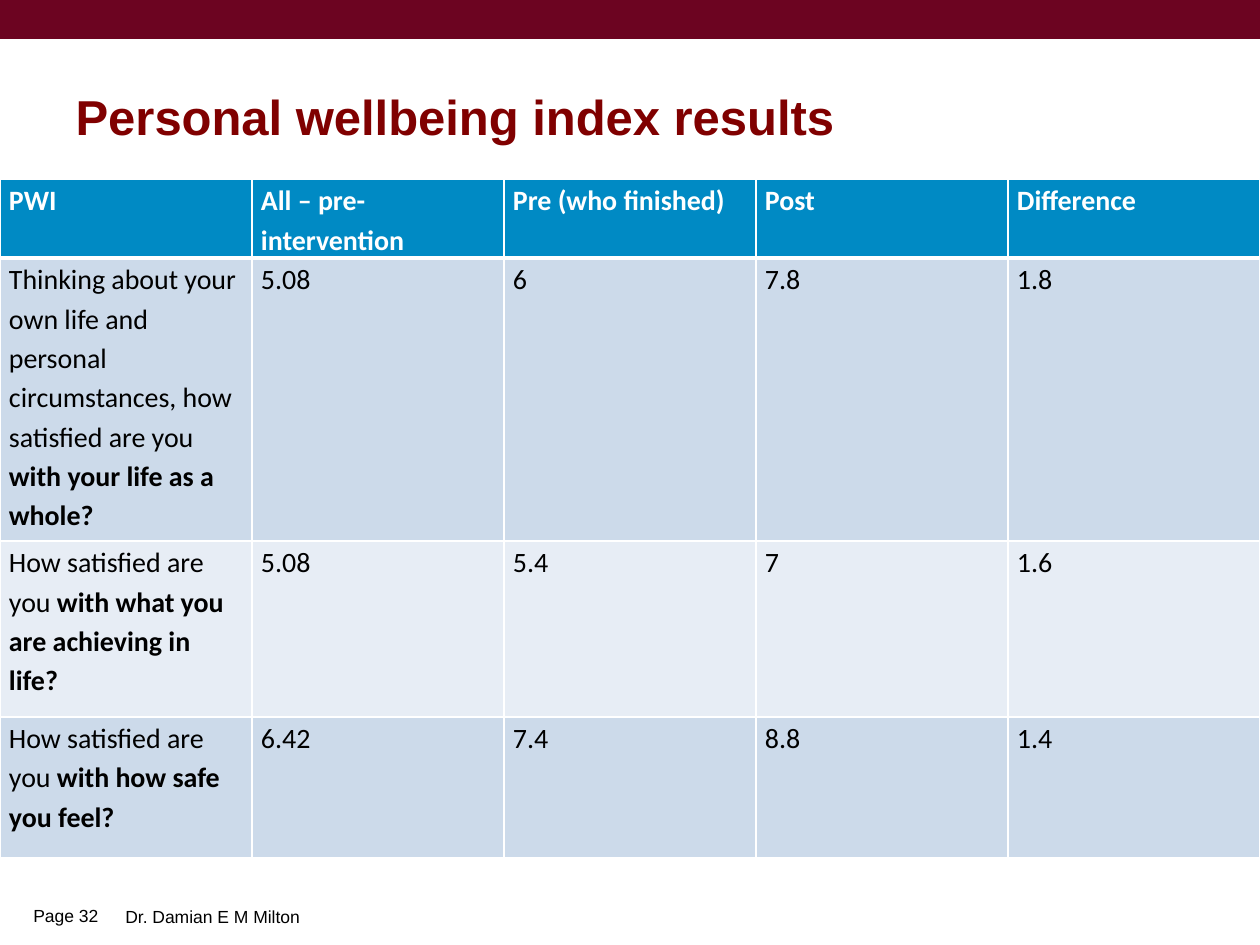
from lxml.etree import SubElement
from pptx import Presentation
from pptx.dml.color import RGBColor
from pptx.enum.shapes import MSO_SHAPE
from pptx.enum.text import MSO_ANCHOR, MSO_AUTO_SIZE, PP_ALIGN
from pptx.oxml.ns import qn
from pptx.util import Emu, Pt

SCALE = 914400 / 126


def px(*lengths):
    return [Emu(round(length * SCALE)) for length in lengths]


def style(run, font, size, colour, bold=False):
    run.font.name = font
    run.font.size = Pt(size)
    run.font.color.rgb = RGBColor.from_string(colour)
    run.font.bold = bold


presentation = Presentation()
presentation.slide_width, presentation.slide_height = px(1260, 945)
slide = presentation.slides.add_slide(presentation.slide_layouts[5])

banner = slide.shapes.add_shape(MSO_SHAPE.RECTANGLE, *px(0, 0, 1260, 39))
banner.shadow.inherit = False
banner.fill.solid()
banner.fill.fore_color.rgb = RGBColor.from_string("6C0421")
banner.line.fill.background()

title = slide.shapes.title
title.left, title.top, title.width, title.height = px(63, 76, 1143, 79)
heading = title.text_frame
heading.text = "Personal wellbeing index results"
heading.auto_size = MSO_AUTO_SIZE.NONE
heading.vertical_anchor = MSO_ANCHOR.MIDDLE
heading.paragraphs[0].alignment = PP_ALIGN.LEFT
style(heading.paragraphs[0].runs[0], "Arial", 28, "800000", True)

results = [
    [("PWI",), ("All – pre-intervention",), ("Pre (who finished)",), ("Post",), ("Difference",)],
    [("Thinking about your own life and personal circumstances, how satisfied are you ",
      "with your life as a whole?"), ("5.08",), ("6",), ("7.8",), ("1.8",)],
    [("How satisfied are you ", "with what you are achieving in life?"),
     ("5.08",), ("5.4",), ("7",), ("1.6",)],
    [("How satisfied are you ", "with how safe you feel?"),
     ("6.42",), ("7.4",), ("8.8",), ("1.4",)],
]
row_heights = px(79, 283, 176, 141)
row_fills = ["008AC4", "CCDAEA", "E7EDF5", "CCDAEA"]
wellbeing = slide.shapes.add_table(4, 5, *px(0, 179, 1260, 679)).table
for column in wellbeing.columns:
    column.width = px(252)[0]

for index, (answers, height, fill) in enumerate(zip(results, row_heights, row_fills)):
    wellbeing.rows[index].height = height
    is_header = index == 0
    for cell, parts in zip(wellbeing.rows[index].cells, answers):
        cell.margin_left, cell.margin_right, cell.margin_top, cell.margin_bottom = px(9, 9, 0, 0)
        for side in ("L", "R", "T", "B"):
            thick = (side == "B" and is_header) or (side == "T" and index == 1)
            border = SubElement(cell._tc.get_or_add_tcPr(), qn(f"a:ln{side}"),
                                w=str(Pt(3 if thick else 1)))
            SubElement(SubElement(border, qn("a:solidFill")), qn("a:srgbClr"), val="FFFFFF")
        cell.fill.solid()
        cell.fill.fore_color.rgb = RGBColor.from_string(fill)
        paragraph = cell.text_frame.paragraphs[0]
        paragraph.line_spacing = 1.15
        for position, part in enumerate(parts):
            run = paragraph.add_run()
            run.text = part
            style(run, "Calibri", 16, "FFFFFF" if is_header else "000000",
                  is_header or position == 1)

for wording, place, anchor in [
    ("Page 32", (21, 897, 93, 37), MSO_ANCHOR.MIDDLE),
    ("Dr. Damian E M Milton", (113, 900, 895, 34), MSO_ANCHOR.TOP),
]:
    footer = slide.shapes.add_textbox(*px(*place)).text_frame
    footer.word_wrap = True
    footer.vertical_anchor = anchor
    footer.text = wording
    style(footer.paragraphs[0].runs[0], "Arial", 10, "000000")

presentation.save("out.pptx")
